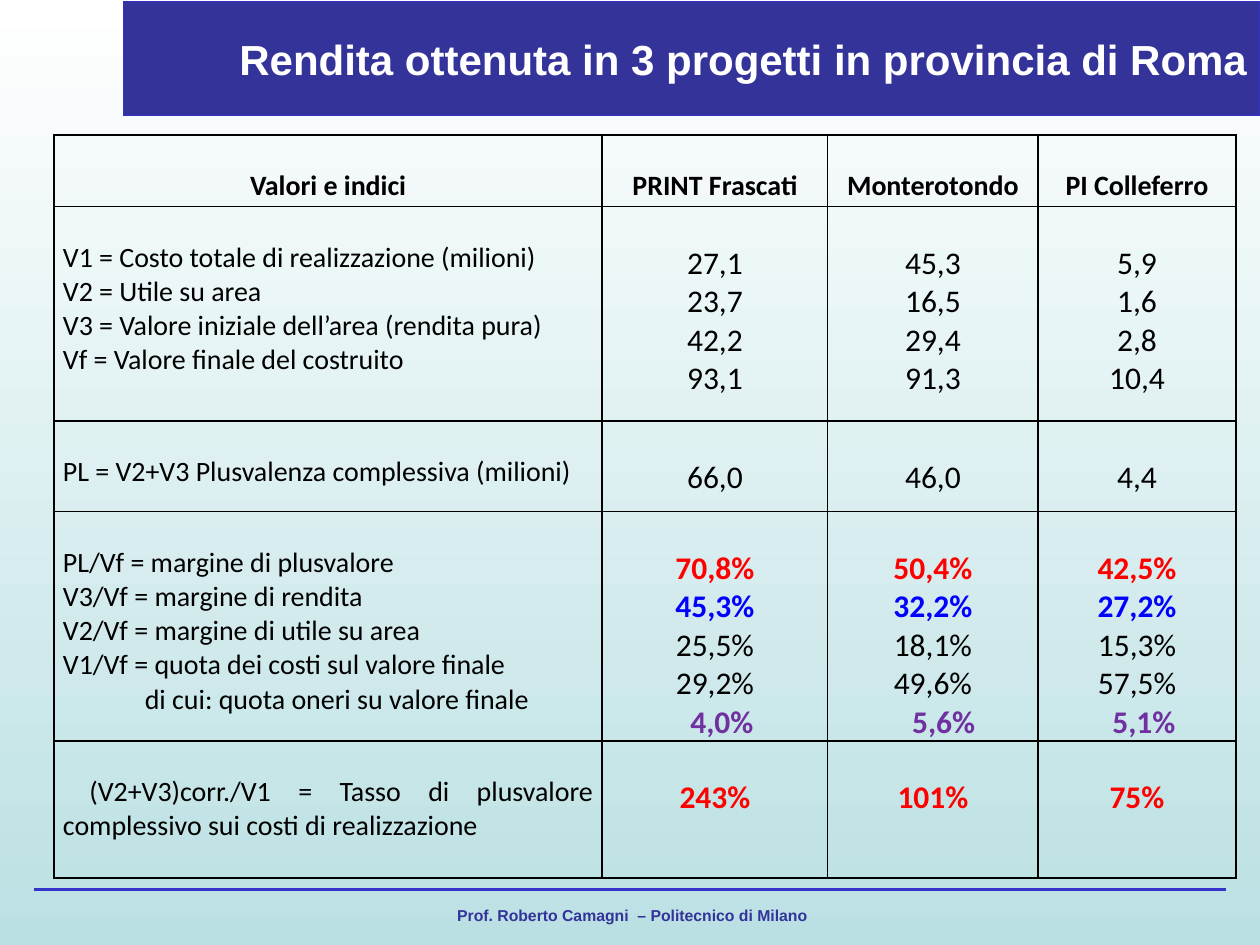
from lxml import etree
from pptx import Presentation
from pptx.dml.color import RGBColor
from pptx.enum import shapes, text
from pptx.oxml import ns
from pptx.util import Inches, Pt

BLACK, WHITE = RGBColor(0, 0, 0), RGBColor(255, 255, 255)
NAVY, BLUE = RGBColor(0x33, 0x33, 0x99), RGBColor(0x33, 0x33, 0xCC)
TEAL = RGBColor(0xBB, 0xE0, 0xE3)
RED, PURE = RGBColor(255, 0, 0), RGBColor(0, 0, 255)
PLUM = RGBColor(0x70, 0x30, 0xA0)
MID, RIGHT = text.PP_ALIGN.CENTER, text.PP_ALIGN.RIGHT
FULL = text.PP_ALIGN.JUSTIFY


def style(para, words, size, color, bold, align, face):
    para.alignment = align
    run = para.add_run()
    run.text = words
    form = {"name": face, "size": Pt(size), "bold": bold}
    for key, value in form.items():
        setattr(run.font, key, value)
    run.font.color.rgb = color


def edge(cell):
    props = cell._tc.get_or_add_tcPr()
    for side in ("a:lnL", "a:lnR", "a:lnT", "a:lnB"):
        line = etree.SubElement(props, ns.qn(side), w=str(Pt(1)))
        fill = etree.SubElement(line, ns.qn("a:solidFill"))
        etree.SubElement(fill, ns.qn("a:srgbClr"), val=str(BLACK))
    cell.fill.background()


deck = Presentation()
deck.slide_width, deck.slide_height = Inches(10), Inches(7.5)
slide = deck.slides.add_slide(deck.slide_layouts[5])

# Background, white down to teal
back = slide.background.fill
back.gradient()
back.gradient_angle = 270
for stop, color, place in zip(back.gradient_stops, (WHITE, TEAL), (0, 1)):
    stop.color.rgb = color
    stop.position = place

# Footer rule
rule = slide.shapes.add_connector(shapes.MSO_CONNECTOR.STRAIGHT, Inches(0.27),
                                  Inches(7.06), Inches(9.73), Inches(7.06))
rule.line.color.rgb = BLUE
rule.line.width = Pt(1.5)
etree.SubElement(rule._element.spPr, ns.qn("a:effectLst"))

# Title bar
title = slide.shapes.title
title.left, title.top = Inches(0.98), Inches(0.01)
title.width, title.height = Inches(9.02), Inches(0.91)
title.fill.solid()
title.fill.fore_color.rgb = NAVY
title.line.color.rgb = BLUE
title.line.width = Pt(0.75)
frame = title.text_frame
frame.auto_size = text.MSO_AUTO_SIZE.NONE
frame.vertical_anchor = text.MSO_ANCHOR.MIDDLE
style(frame.paragraphs[0], "Rendita ottenuta in 3 progetti in provincia di Roma",
      24, WHITE, True, RIGHT, "Arial")

# Footer
foot = slide.shapes.add_textbox(Inches(3.53), Inches(7.14), Inches(4.94), Inches(0.36))
foot.text_frame.word_wrap = True
style(foot.text_frame.paragraphs[0], "Prof. Roberto Camagni  – Politecnico di Milano",
      9, NAVY, True, text.PP_ALIGN.LEFT, "Arial")

# Table rows: each line holds a label, three values and the value colour
rows = [
    [("Valori e indici", "PRINT Frascati", "Monterotondo", "PI Colleferro", BLACK)],
    [("V1 = Costo totale di realizzazione (milioni)", "27,1", "45,3", "5,9", BLACK),
     ("V2 = Utile su area", "23,7", "16,5", "1,6", BLACK),
     ("V3 = Valore iniziale dell’area (rendita pura)", "42,2", "29,4", "2,8", BLACK),
     ("Vf = Valore finale del costruito", "93,1", "91,3", "10,4", BLACK)],
    [("PL = V2+V3 Plusvalenza complessiva (milioni)", "66,0", "46,0", "4,4", BLACK)],
    [("PL/Vf = margine di plusvalore", "70,8%", "50,4%", "42,5%", RED),
     ("V3/Vf = margine di rendita", "45,3%", "32,2%", "27,2%", PURE),
     ("V2/Vf = margine di utile su area", "25,5%", "18,1%", "15,3%", BLACK),
     ("V1/Vf = quota dei costi sul valore finale", "29,2%", "49,6%", "57,5%", BLACK),
     ("di cui: quota oneri su valore finale", "4,0%", "5,6%", "5,1%", PLUM)],
    [("(V2+V3)corr./V1 = Tasso di plusvalore complessivo sui costi di realizzazione",
      "243%", "101%", "75%", RED)],
]
wide = (4.35, 1.79, 1.67, 1.57)
tall = (0.57, 1.7, 0.72, 1.82, 1.09)
shift = (0.65, 0.11, 0.17, 0.11)  # indents of the "di cui" line

grid = slide.shapes.add_table(len(tall), len(wide), Inches(0.43), Inches(1.07),
                              Inches(9.37), Inches(5.9)).table
grid.first_row = grid.horz_banding = False
for col, size in zip(grid.columns, wide):
    col.width = Inches(size)
for row, size in zip(grid.rows, tall):
    row.height = Inches(size)

for r, lines in enumerate(rows):
    for c in range(len(wide)):
        cell = grid.cell(r, c)
        edge(cell)
        small = r == 0 or c == 0
        cell.margin_left = cell.margin_right = Inches(0.07)
        cell.margin_top = Inches(0.27 if small else 0.3)  # one line of air
        cell.margin_bottom = 0
        for n, line in enumerate(lines):
            frame = cell.text_frame
            para = frame.add_paragraph() if n else frame.paragraphs[0]
            color = line[4] if c else BLACK
            style(para, line[c], 16 if small else 18, color,
                  r == 0 or color != BLACK, FULL if c == 0 and r else MID, "Calibri")
            props = para._p.get_or_add_pPr()
            if line[4] == PLUM:
                props.set("marL", str(Inches(shift[c])))
            elif r == 4 and c == 0:
                props.set("indent", str(Inches(0.21)))

deck.save("out.pptx")
